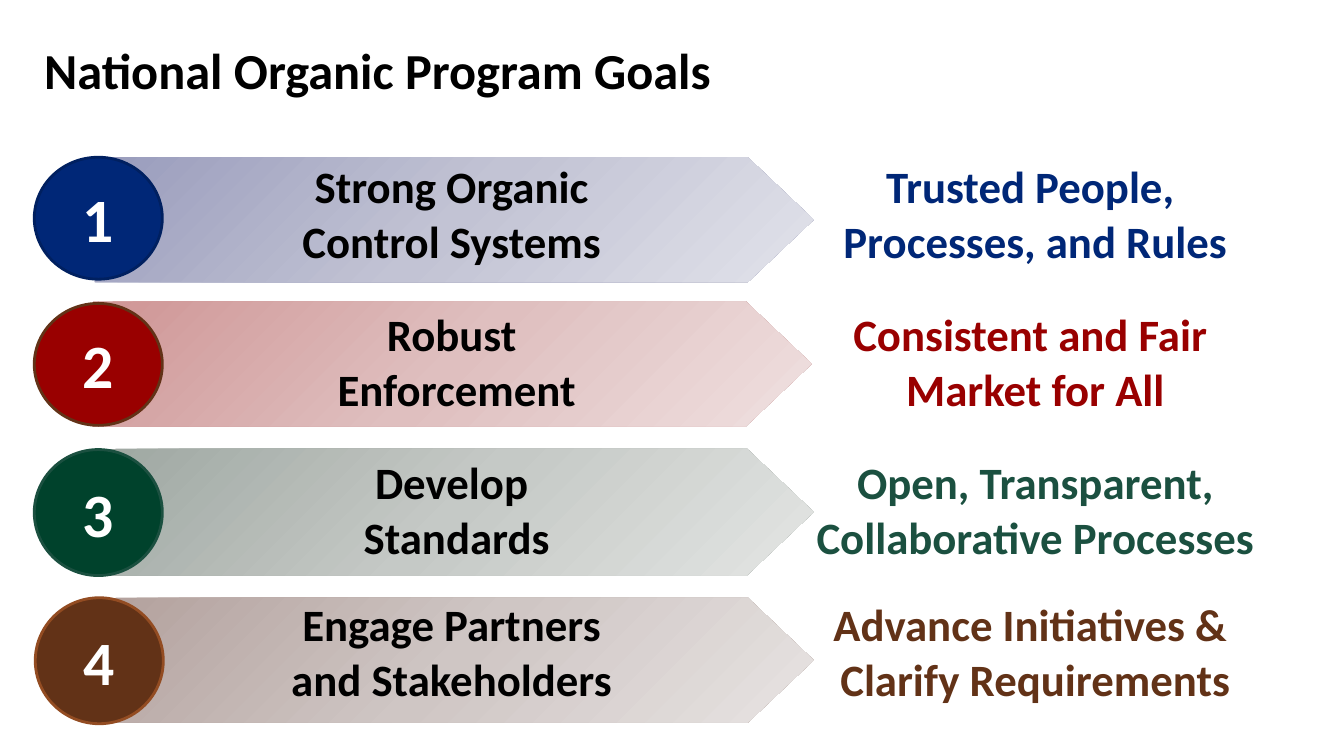
from copy import deepcopy

from pptx import Presentation
from pptx.dml.color import RGBColor
from pptx.enum.shapes import MSO_SHAPE
from pptx.enum.text import MSO_ANCHOR, PP_ALIGN
from pptx.oxml.ns import qn
from pptx.util import Emu, Pt
from lxml import etree

ARROW, OVAL = MSO_SHAPE.RIGHT_ARROW, MSO_SHAPE.OVAL
MIDDLE = MSO_ANCHOR.MIDDLE
LEFT, CENTER = PP_ALIGN.LEFT, PP_ALIGN.CENTER
EMU_PER_PX = 9144  # 100 px to the inch
FONT = "Calibri"

COLORS = {
    "black": "000000", "white": "FFFFFF",
    "navy": "002777", "navy_edge": "002060",
    "red": "990000", "brown": "623217", "brown_edge": "934C22",
    "green": "00422C", "green_edge": "1B5040",
    "navy_1": "999CBC", "navy_2": "C2C3D4", "navy_3": "E1E2EA",
    "red_1": "CF9595", "red_2": "DFBFBF", "red_3": "EFE0E0",
    "green_1": "9EA7A1", "green_2": "C5C9C6", "green_3": "E3E5E3",
    "brown_1": "B2A09C", "brown_2": "CFC6C4", "brown_3": "E7E3E2",
}

# Each goal: its texts, colours, and the (left, top, width, height) of its shapes
GOALS = [
    dict(goal="Strong Organic \vControl Systems ",
         result="Trusted People, \nProcesses, and Rules",
         hue="navy", edge="navy_edge", ink="navy",
         arrow=(94, 156, 713, 124), badge=(34, 156, 127, 121)),
    dict(goal="Robust \vEnforcement",
         result="Consistent and Fair \vMarket for All",
         hue="red", edge="brown", ink="red",
         arrow=(92, 299, 713, 124), badge=(34, 301, 127, 121)),
    dict(goal="Develop \vStandards",
         result="Open, Transparent,\vCollaborative Processes",
         hue="green", edge="green_edge", ink="green_edge",
         arrow=(94, 445, 713, 126), badge=(34, 446, 127, 125)),
    dict(goal="Engage Partners \vand Stakeholders ",
         result="Advance Initiatives & \vClarify Requirements",
         hue="brown", edge="brown_edge", ink="brown",
         arrow=(94, 593, 713, 124), badge=(35, 593, 127, 125)),
]
ROW_HEIGHTS = [146, 147, 147, 136]
COLUMN_WIDTH = 574


def px(length):
    return Emu(length * EMU_PER_PX)


def color(name):
    return RGBColor.from_string(COLORS[name])


def write(frame, text, size=32, ink="black", align=CENTER):
    """Fill a text frame with bold text; \\n parts paragraphs, \\v breaks lines."""
    frame.word_wrap = True
    frame.text = text
    for para in frame.paragraphs:
        para.alignment = align
        for span in para.runs:
            span.font.name = FONT
            span.font.size = Pt(size)
            span.font.bold = True
            span.font.color.rgb = color(ink)


def add_title(page, text):
    box = page.shapes.add_textbox(px(34), px(24), px(1170), px(90))
    box.text_frame.vertical_anchor = MIDDLE
    write(box.text_frame, text, size=36, align=LEFT)


def add_arrow(page, place, hue):
    arrow = page.shapes.add_shape(ARROW, *map(px, place))
    arrow.shadow.inherit = False
    arrow.adjustments[0] = 1
    arrow.adjustments[1] = 0.527
    arrow.line.fill.background()
    arrow.fill.gradient()
    arrow.fill.gradient_angle = 315
    # A third stop for the middle of the gradient
    stop_list = arrow._element.spPr.find(".//" + qn("a:gsLst"))
    stop_list.insert(1, deepcopy(stop_list[0]))
    for index, stop in enumerate(arrow.fill.gradient_stops):
        stop.position = index / 2
        stop.color.rgb = color(f"{hue}_{index + 1}")


def add_badge(page, place, number, hue, edge):
    badge = page.shapes.add_shape(OVAL, *map(px, place))
    badge.shadow.inherit = False
    badge.fill.solid()
    badge.fill.fore_color.rgb = color(hue)
    badge.line.color.rgb = color(edge)
    badge.line.width = Pt(2)
    badge.text_frame.vertical_anchor = MIDDLE
    write(badge.text_frame, str(number), size=44, ink="white")


def clear_cell(cell):
    """Leave a cell with neither borders nor fill."""
    properties = cell._tc.get_or_add_tcPr()
    for side in ("a:lnL", "a:lnR", "a:lnT", "a:lnB"):
        border = etree.SubElement(properties, qn(side))
        etree.SubElement(border, qn("a:noFill"))
    cell.fill.background()


def add_goal_table(page):
    table = page.shapes.add_table(
        len(GOALS), 2, px(166), px(141),
        px(2 * COLUMN_WIDTH), px(sum(ROW_HEIGHTS))).table
    table.first_row = table.horz_banding = False
    for column in table.columns:
        column.width = px(COLUMN_WIDTH)
    for index, (goal, height) in enumerate(zip(GOALS, ROW_HEIGHTS)):
        table.rows[index].height = px(height)
        texts = [(goal["goal"], "black"), (goal["result"], goal["ink"])]
        for column, (text, ink) in enumerate(texts):
            cell = table.cell(index, column)
            clear_cell(cell)
            cell.vertical_anchor = MIDDLE
            write(cell.text_frame, text, ink=ink)


def main():
    deck = Presentation()
    deck.slide_width, deck.slide_height = px(1333), px(750)
    page = deck.slides.add_slide(deck.slide_layouts[6])

    add_title(page, "National Organic Program Goals")
    # Arrows with numbered badges
    for number, goal in enumerate(GOALS, 1):
        add_arrow(page, goal["arrow"], goal["hue"])
        add_badge(page, goal["badge"], number, goal["hue"], goal["edge"])
    # Goals and their results, over the arrows
    add_goal_table(page)

    deck.save("out.pptx")


if __name__ == "__main__":
    main()
